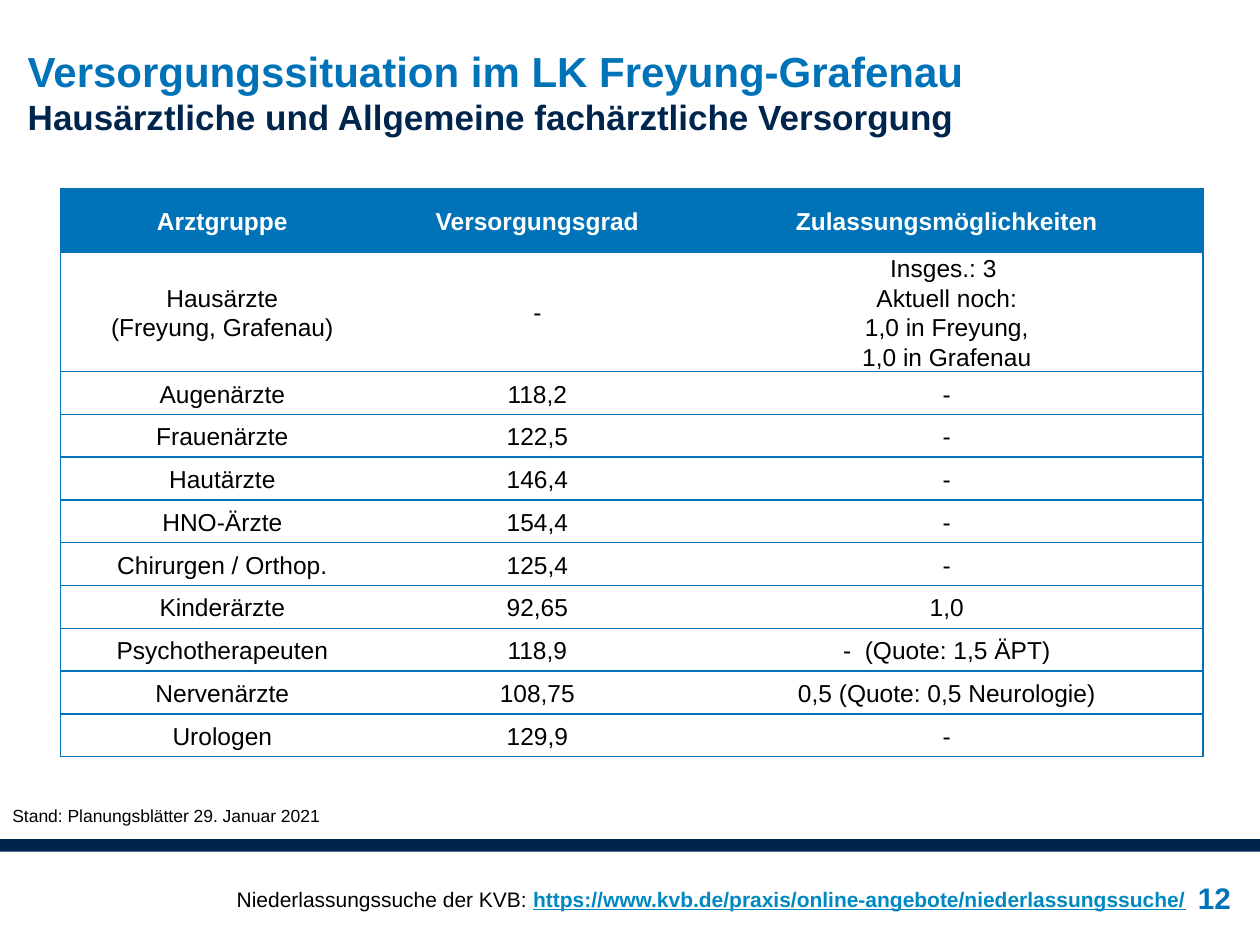
"""Build the slide on medical care in the district of Freyung-Grafenau."""
import lxml.etree
import pptx
import pptx.dml.color
import pptx.enum.shapes
import pptx.enum.text
import pptx.oxml.ns
import pptx.util

BLUE = pptx.dml.color.RGBColor(0x00, 0x72, 0xB7)
NAVY = pptx.dml.color.RGBColor(0x00, 0x25, 0x4D)
LINK = pptx.dml.color.RGBColor(0x00, 0x88, 0xC3)
BLACK = pptx.dml.color.RGBColor(0x00, 0x00, 0x00)
WHITE = pptx.dml.color.RGBColor(0xFF, 0xFF, 0xFF)
WIDTH, HEIGHT = pptx.util.Inches(10), pptx.util.Inches(7.5)
ANCHOR = pptx.enum.text.MSO_ANCHOR
ALIGN = pptx.enum.text.PP_ALIGN

COLUMN_SHARES = (25.7, 24.3, 40.7)
HEADER_SHARE, FIRST_SHARE, ROW_SHARE = 6.67, 12.67, 4.53
ROWS = (
    ("Arztgruppe", "Versorgungsgrad", "Zulassungsmöglichkeiten"),
    ("Hausärzte\n(Freyung, Grafenau)", "-",
     "Insges.: 3 \nAktuell noch:\n1,0 in Freyung,\n1,0 in Grafenau"),
    ("Augenärzte", "118,2", "-"),
    ("Frauenärzte", "122,5", "-"),
    ("Hautärzte", "146,4", "-"),
    ("HNO-Ärzte", "154,4", "-"),
    ("Chirurgen / Orthop.", "125,4", "-"),
    ("Kinderärzte", "92,65", "1,0"),
    ("Psychotherapeuten", "118,9", "-  (Quote: 1,5 ÄPT)"),
    ("Nervenärzte", "108,75", "0,5 (Quote: 0,5 Neurologie)"),
    ("Urologen", "129,9", "-"),
)


def across(share):
    """Return a percentage of the slide width as a length."""
    return pptx.util.Emu(round(WIDTH * share / 100))


def down(share):
    """Return a percentage of the slide height as a length."""
    return pptx.util.Emu(round(HEIGHT * share / 100))


def area(left, top, width, height):
    """Return a position and size given in percent of the slide."""
    return across(left), down(top), across(width), down(height)


def add_span(para, text, size, color, bold=False, underline=None):
    """Append one formatted run to a paragraph."""
    span = para.add_run()
    span.text = text
    span.font.name = "Arial"
    span.font.size = pptx.util.Pt(size)
    span.font.color.rgb = color
    span.font.bold = bold
    span.font.underline = underline


def set_margins(holder, left, top, right, bottom):
    """Set the inner margins of a text frame or cell in inches."""
    holder.margin_left = pptx.util.Inches(left)
    holder.margin_top = pptx.util.Inches(top)
    holder.margin_right = pptx.util.Inches(right)
    holder.margin_bottom = pptx.util.Inches(bottom)


def add_title(page):
    """Fill the title placeholder with heading and subheading."""
    title = page.shapes.title
    title.left, title.top, title.width, title.height = area(2.2, 4.8, 84, 6.67)
    frame = title.text_frame
    frame.auto_size = pptx.enum.text.MSO_AUTO_SIZE.NONE
    frame.vertical_anchor = ANCHOR.TOP
    set_margins(frame, 0, 0, 0, 0)
    para = frame.paragraphs[0]
    para.alignment = ALIGN.LEFT
    add_span(para, "Versorgungssituation im LK Freyung-Grafenau", 24, BLUE, True)
    para.add_line_break()
    add_span(para, "Hausärztliche und Allgemeine fachärztliche Versorgung",
             20, NAVY, True)


def add_bar(page):
    """Draw the footer bar across the slide."""
    bar = page.shapes.add_shape(
        pptx.enum.shapes.MSO_SHAPE.RECTANGLE, *area(0, 88.8, 100, 1.33))
    bar.shadow.inherit = False
    bar.fill.solid()
    bar.fill.fore_color.rgb = NAVY
    bar.line.fill.background()


def add_text(page, place):
    """Add a wrapping text box and return its frame."""
    frame = page.shapes.add_textbox(*place).text_frame
    frame.word_wrap = True
    return frame


def set_border(cell, side, visible):
    """Give one side of a cell a blue line or none."""
    line = lxml.etree.SubElement(
        cell._tc.get_or_add_tcPr(), pptx.oxml.ns.qn("a:ln" + side),
        w=str(pptx.util.Pt(1)))
    kind = "a:solidFill" if visible else "a:noFill"
    paint = lxml.etree.SubElement(line, pptx.oxml.ns.qn(kind))
    if visible:
        lxml.etree.SubElement(
            paint, pptx.oxml.ns.qn("a:srgbClr"), val=str(BLUE))


def fill_cell(cell, text, header, first, last):
    """Write and format one table cell."""
    for side, visible in (("L", first), ("R", last), ("T", True), ("B", True)):
        set_border(cell, side, visible)
    cell.fill.solid()
    cell.fill.fore_color.rgb = BLUE if header else WHITE
    cell.vertical_anchor = ANCHOR.MIDDLE
    set_margins(cell, 0.01, 0.01, 0.01, 0)
    for index, line in enumerate(text.split("\n")):
        frame = cell.text_frame
        para = frame.add_paragraph() if index else frame.paragraphs[0]
        para.alignment = ALIGN.CENTER
        para.line_spacing = 1.07
        add_span(para, line, 14, WHITE if header else BLACK, header)


def add_care_table(page):
    """Add the table of doctor groups."""
    heights = [HEADER_SHARE, FIRST_SHARE] + [ROW_SHARE] * (len(ROWS) - 2)
    place = area(4.8, 20, sum(COLUMN_SHARES), sum(heights))
    table = page.shapes.add_table(len(ROWS), len(COLUMN_SHARES), *place).table
    table.horz_banding = False
    for column, share in zip(table.columns, COLUMN_SHARES):
        column.width = across(share)
    for row, share in zip(table.rows, heights):
        row.height = down(share)
    last = len(COLUMN_SHARES) - 1
    for r, texts in enumerate(ROWS):
        for c, text in enumerate(texts):
            fill_cell(table.cell(r, c), text, r == 0, c == 0, c == last)


def add_footer(page):
    """Add the page number, the date note and the search link."""
    number = add_text(page, area(92.5, 90, 5.2, 10))
    number.vertical_anchor = ANCHOR.MIDDLE
    set_margins(number, 0.03, 0, 0, 0)
    number.paragraphs[0].alignment = ALIGN.RIGHT
    add_span(number.paragraphs[0], "12", 17, BLUE, True)

    note = add_text(page, area(0, 84.5, 34, 3.6))
    add_span(note.paragraphs[0], "Stand: Planungsblätter 29. Januar 2021",
             10, BLACK)

    search = add_text(page, area(17.8, 93.1, 89.1, 8.1)).paragraphs[0]
    add_span(search, "Niederlassungssuche der KVB: ", 12, BLACK)
    add_span(search,
             "https://www.kvb.de/praxis/online-angebote/niederlassungssuche/",
             12, LINK, True, True)


def main():
    """Build and save the deck."""
    deck = pptx.Presentation()
    deck.slide_width, deck.slide_height = WIDTH, HEIGHT
    page = deck.slides.add_slide(deck.slide_layouts[5])
    add_bar(page)
    add_title(page)
    add_care_table(page)
    add_footer(page)
    deck.save("out.pptx")


if __name__ == "__main__":
    main()
